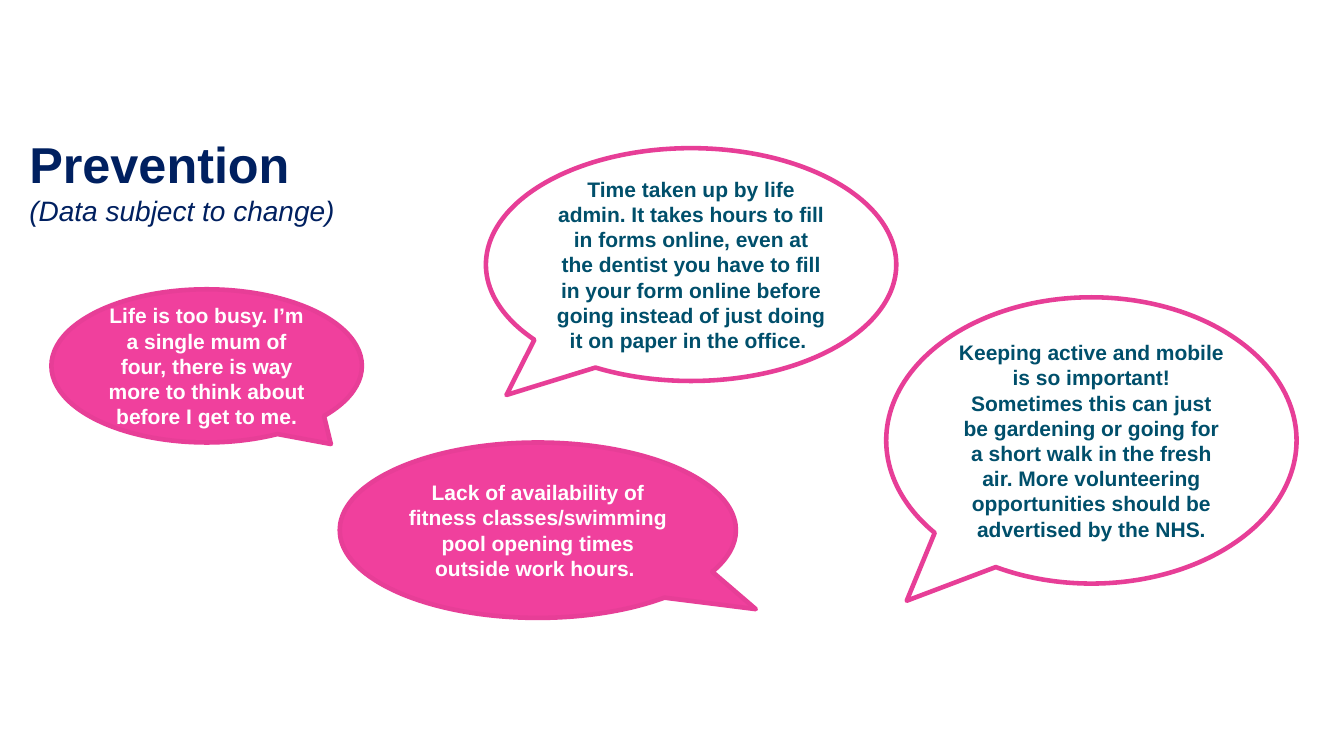
from pptx import Presentation
from pptx.dml.color import RGBColor
from pptx.enum.shapes import MSO_SHAPE
from pptx.enum.text import MSO_ANCHOR, MSO_AUTO_SIZE, PP_ALIGN
from pptx.util import Inches, Pt

COLORS = {"navy": "002060", "teal": "004F6B", "white": "FFFFFF",
          "pink": "F0409D", "outline": "E73E97"}
FONT = "Arial"

# Box (left, top, width, height), tail tip as shares of the box from its centre, filled, quote
QUOTES = [
    ((0.51, 2.87, 3.08, 1.52), (0.4, 0.51), True,
     "Life is too busy. I’m a single mum of four, there is way more to think "
     "about before I get to me."),
    ((4.82, 1.47, 4.07, 2.31), (-0.45, 0.56), False,
     "Time taken up by life admin. It takes hours to fill in forms online, even at "
     "the dentist you have to fill in your form online before going instead of just "
     "doing it on paper in the office. "),
    ((3.37, 4.39, 3.93, 1.74), (0.55, 0.45), True,
     "Lack of availability of fitness classes/swimming pool opening times outside "
     "work hours. "),
    ((8.79, 2.95, 4.07, 2.84), (-0.45, 0.56), False,
     "Keeping active and mobile is so important! Sometimes this can just be gardening "
     "or going for a short walk in the fresh air. More volunteering opportunities "
     "should be advertised by the NHS."),
]


def color(name):
    return RGBColor.from_string(COLORS[name])


def style(paragraph, size, color_name, align, bold=False, italic=False):
    paragraph.alignment = align
    for run in paragraph.runs:
        font = run.font
        font.name, font.size = FONT, Pt(size)
        font.bold, font.italic = bold, italic
        font.color.rgb = color(color_name)


def add_heading(slide, box):
    heading = slide.shapes.title
    heading.left, heading.top, heading.width, heading.height = map(Inches, box)
    frame = heading.text_frame
    frame.text = "Prevention\n(Data subject to change)"
    frame.auto_size = MSO_AUTO_SIZE.NONE
    frame.vertical_anchor = MSO_ANCHOR.TOP
    title, caveat = frame.paragraphs
    style(title, 36, "navy", PP_ALIGN.LEFT, bold=True)
    style(caveat, 20, "navy", PP_ALIGN.LEFT, italic=True)


def add_quote(slide, box, tail, filled, quote):
    bubble = slide.shapes.add_shape(MSO_SHAPE.OVAL_CALLOUT, *map(Inches, box))
    bubble.adjustments[0], bubble.adjustments[1] = tail
    bubble.shadow.inherit = False
    if filled:
        bubble.fill.solid()
        bubble.fill.fore_color.rgb = color("pink")
    else:
        bubble.fill.background()
    bubble.line.color.rgb = color("outline")
    bubble.line.width = Pt(3.25)
    frame = bubble.text_frame
    frame.text = quote
    frame.word_wrap = True
    frame.vertical_anchor = MSO_ANCHOR.MIDDLE
    style(frame.paragraphs[0], 15, "white" if filled else "teal",
          PP_ALIGN.CENTER, bold=True)


def main():
    prs = Presentation()
    prs.slide_width, prs.slide_height = Inches(13.33), Inches(7.5)
    slide = prs.slides.add_slide(prs.slide_layouts[5])
    add_heading(slide, (0.19, 1.27, 12.05, 1.68))
    for quote in QUOTES:
        add_quote(slide, *quote)
    prs.save("out.pptx")


if __name__ == "__main__":
    main()
